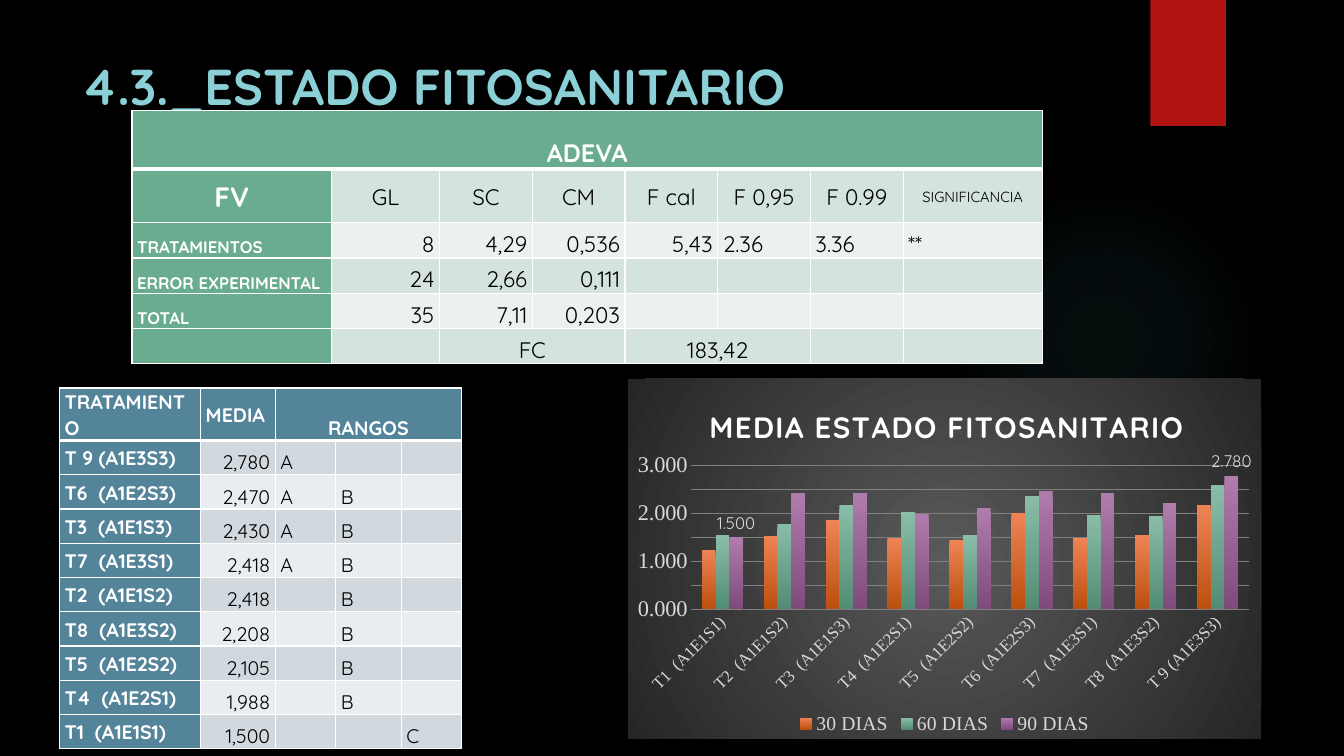
import lxml.etree
import pptx
import pptx.chart.data
import pptx.dml.color
import pptx.enum.chart
import pptx.enum.shapes
import pptx.enum.text
import pptx.oxml
import pptx.oxml.ns
import pptx.util
from pptx.util import Inches

RGBColor = pptx.dml.color.RGBColor
BLACK = RGBColor(0x00, 0x00, 0x00)
WHITE = RGBColor(0xFF, 0xFF, 0xFF)
RED = RGBColor(0xB0, 0x15, 0x13)
AQUA = RGBColor(0x8A, 0xD0, 0xD6)
GLOW = RGBColor(0x50, 0xB9, 0xC1)
LIGHT_GREY = RGBColor(0xD9, 0xD9, 0xD9)
GRID_GREY = RGBColor(0x80, 0x80, 0x80)
PANEL = (RGBColor(0x59, 0x59, 0x59), RGBColor(0x26, 0x26, 0x26))
# Header fill, then the two fills of alternating rows
GREENS = (RGBColor(0x6A, 0xAC, 0x90), RGBColor(0xD4, 0xE3, 0xDB), RGBColor(0xEB, 0xF1, 0xEE))
BLUES = (RGBColor(0x54, 0x84, 0x9A), RGBColor(0xD1, 0xD9, 0xDE), RGBColor(0xE9, 0xED, 0xEF))

FONT = "Quicksand"
AXIS_FONT = "Times New Roman"
DRAWING = 'xmlns:a="http://schemas.openxmlformats.org/drawingml/2006/main"'
CHART = 'xmlns:c="http://schemas.openxmlformats.org/drawingml/2006/chart"'
ALIGN = pptx.enum.text.PP_ALIGN
ANCHOR = pptx.enum.text.MSO_ANCHOR

ADEVA_WIDTHS = (1.98, 1.07, 0.92, 0.92, 0.92, 0.92, 0.92, 1.38)
ADEVA_HEIGHTS = (0.58, 0.53, 0.35, 0.35, 0.35, 0.35)
ADEVA_MERGES = ((0, 0, 7), (5, 2, 3), (5, 4, 5))
ADEVA = (
    ("ADEVA",),
    ("FV", "GL", "SC", "CM", "F cal", "F 0,95", "F 0.99", "SIGNIFICANCIA"),
    ("TRATAMIENTOS", "8", "4,29", "0,536", "5,43", "2.36", "3.36", "**"),
    ("ERROR EXPERIMENTAL", "24", "2,66", "0,111"),
    ("TOTAL", "35", "7,11", "0,203"),
    ("", "", "FC", "", "183,42"),
)
RANGE_WIDTHS = (1.4, 0.74, 0.6, 0.65, 0.6)
RANGES = (
    ("TRATAMIENTO", "MEDIA", "RANGOS"),
    ("T 9 (A1E3S3)", "2,780", "A"),
    ("T6  (A1E2S3)", "2,470", "A", "B"),
    ("T3  (A1E1S3)", "2,430", "A", "B"),
    ("T7  (A1E3S1)", "2,418", "A", "B"),
    ("T2  (A1E1S2)", "2,418", "", "B"),
    ("T8  (A1E3S2)", "2,208", "", "B"),
    ("T5  (A1E2S2)", "2,105", "", "B"),
    ("T4  (A1E2S1)", "1,988", "", "B"),
    ("T1  (A1E1S1)", "1,500", "", "", "C"),
)
CATEGORIES = ("T1  (A1E1S1)", "T2  (A1E1S2)", "T3  (A1E1S3)", "T4  (A1E2S1)", "T5  (A1E2S2)",
              "T6  (A1E2S3)", "T7  (A1E3S1)", "T8  (A1E3S2)", "T 9 (A1E3S3)")
SERIES = (
    ("30 DIAS", (1.24, 1.53, 1.85, 1.49, 1.44, 2, 1.48, 1.54, 2.17),
     (RGBColor(0xEE, 0x84, 0x55), RGBColor(0xBC, 0x4F, 0x0E))),
    ("60 DIAS", (1.54, 1.77, 2.17, 2.02, 1.54, 2.35, 1.96, 1.95, 2.58),
     (RGBColor(0x89, 0xBD, 0xA7), RGBColor(0x53, 0x8C, 0x74))),
    ("90 DIAS", (1.5, 2.418, 2.43, 1.988, 2.105, 2.47, 2.418, 2.208, 2.78),
     (RGBColor(0xAF, 0x7C, 0xAC), RGBColor(0x7F, 0x4B, 0x7C))),
)


def apply(target, **values):
    for name, value in values.items():
        setattr(target, name, value)


def set_font(font, size, color, bold=False, name=FONT):
    apply(font, size=pptx.util.Pt(size), bold=bold, name=name)
    font.color.rgb = color


def set_gradient(properties, stops, circular=False):
    """Fill shape properties with (position, colour, opacity) stops, in percent."""
    for tag in ("a:solidFill", "a:gradFill", "a:noFill"):
        for old in properties.findall(pptx.oxml.ns.qn(tag)):
            properties.remove(old)
    marks = "".join(
        f'<a:gs pos="{position * 1000}"><a:srgbClr val="{color}">'
        f'<a:alpha val="{opacity * 1000}"/></a:srgbClr></a:gs>'
        for position, color, opacity in stops)
    direction = ('<a:path path="circle"><a:fillToRect l="50000" t="50000" r="50000" b="50000"/></a:path>'
                 if circular else '<a:lin ang="5400000" scaled="0"/>')
    gradient = pptx.oxml.parse_xml(
        f"<a:gradFill {DRAWING}><a:gsLst>{marks}</a:gsLst>{direction}</a:gradFill>")
    geometry = properties.find(pptx.oxml.ns.qn("a:prstGeom"))
    if geometry is None:
        properties.insert(0, gradient)
    else:
        geometry.addnext(gradient)


def two_stops(colors):
    return [(0, colors[0], 100), (100, colors[1], 100)]


def add_plain_shape(slide, kind, left, top, width, height, color):
    shape = slide.shapes.add_shape(kind, Inches(left), Inches(top), Inches(width), Inches(height))
    shape.shadow.inherit = False
    shape.fill.solid()
    shape.fill.fore_color.rgb = color
    shape.line.fill.background()
    return shape


def set_borders(cell, top, bottom):
    properties = cell._tc.get_or_add_tcPr()
    for side, points in (("L", 1), ("R", 1), ("T", top), ("B", bottom)):
        properties.append(pptx.oxml.parse_xml(
            f'<a:ln{side} {DRAWING} w="{points * 12700}"><a:solidFill>'
            f'<a:srgbClr val="{WHITE}"/></a:solidFill></a:ln{side}>'))


def add_grid(slide, left, top, widths, heights, rows, fills, merges, style):
    """Add a table; style(row, column) gives size, alignment and anchor."""
    table = slide.shapes.add_table(len(heights), len(widths), Inches(left), Inches(top),
                                   Inches(sum(widths)), Inches(sum(heights))).table
    for column, width in zip(table.columns, widths):
        column.width = Inches(width)
    for row, height in zip(table.rows, heights):
        row.height = Inches(height)
    for row, first, last in merges:
        table.cell(row, first).merge(table.cell(row, last))
    for row in range(len(heights)):
        for column in range(len(widths)):
            cell = table.cell(row, column)
            header = row == 0 or column == 0
            size, alignment, anchor = style(row, column)
            apply(cell, margin_left=Inches(0.05), margin_right=Inches(0.05),
                  margin_top=0, margin_bottom=0, vertical_anchor=anchor)
            set_borders(cell, 3 if row == 1 else 1, 3 if row == 0 else 1)
            cell.fill.solid()
            cell.fill.fore_color.rgb = fills[0] if header else fills[2 - row % 2]
            if column < len(rows[row]) and rows[row][column]:
                paragraph = cell.text_frame.paragraphs[0]
                apply(paragraph, alignment=alignment, line_spacing=1.07,
                      space_after=pptx.util.Pt(4))
                run = paragraph.add_run()
                run.text = rows[row][column]
                set_font(run.font, size, WHITE if header else BLACK, header)


def adeva_style(row, column):
    if row == 0:
        return 18, ALIGN.CENTER, ANCHOR.BOTTOM
    if row == 1:
        return {0: 20, 7: 10.5}.get(column, 16), ALIGN.CENTER, ANCHOR.MIDDLE
    if column == 0:
        return 12, ALIGN.LEFT, ANCHOR.BOTTOM
    if row == 5:
        return 16, ALIGN.CENTER, ANCHOR.BOTTOM
    return 16, ALIGN.RIGHT if column < 5 else ALIGN.LEFT, ANCHOR.BOTTOM


def range_style(row, column):
    if column == 0 or (row, column) == (0, 1):
        return 14, ALIGN.LEFT, ANCHOR.MIDDLE
    if row == 0:
        return 14, ALIGN.CENTER, ANCHOR.BOTTOM
    return 14, ALIGN.RIGHT if column == 1 else ALIGN.LEFT, ANCHOR.BOTTOM


def set_layout(parent, successor, inner=False, **places):
    """Place a chart part by fractions of the chart area."""
    for old in parent.findall(pptx.oxml.ns.qn("c:layout")):
        parent.remove(old)
    target = '<c:layoutTarget val="inner"/>' if inner else ""
    modes = "".join(f'<c:{name}Mode val="edge"/>' for name in "xy")
    values = "".join(f'<c:{name} val="{value}"/>' for name, value in places.items())
    layout = pptx.oxml.parse_xml(
        f"<c:layout {CHART}><c:manualLayout>{target}{modes}{values}</c:manualLayout></c:layout>")
    parent.find(pptx.oxml.ns.qn(successor)).addprevious(layout)


def add_media_chart(slide):
    data = pptx.chart.data.CategoryChartData(number_format="0.000")
    data.categories = CATEGORIES
    for name, values, _ in SERIES:
        data.add_series(name, values)
    chart = slide.shapes.add_chart(
        pptx.enum.chart.XL_CHART_TYPE.COLUMN_CLUSTERED,
        Inches(6.23), Inches(3.76), Inches(6.28), Inches(3.57), data).chart
    set_font(chart.font, 10, WHITE)

    # Panel and title
    panel = pptx.oxml.parse_xml(f"<c:spPr {CHART} {DRAWING}><a:ln><a:noFill/></a:ln></c:spPr>")
    set_gradient(panel, two_stops(PANEL), circular=True)
    chart._chartSpace.chart.addnext(panel)
    chart.has_title = True
    run = chart.chart_title.text_frame.paragraphs[0].add_run()
    run.text = "MEDIA ESTADO FITOSANITARIO"
    set_font(run.font, 21, WHITE, True)
    run.font._element.set("spc", "100")
    set_layout(chart.chart_title._element, "c:overlay", x=0.12, y=0.06)

    # Columns and the labels of the lowest and highest treatments
    plot = chart.plots[0]
    apply(plot, gap_width=150, overlap=0, vary_by_categories=False)
    for series, (_, _, colors) in zip(plot.series, SERIES):
        set_gradient(series._element.get_or_add_spPr(), two_stops(colors))
    last = plot.series[2]
    last.data_labels.show_value = False
    for index in (0, 8):
        label = last.points[index].data_label
        set_font(label.font, 12, LIGHT_GREY)
        label.position = pptx.enum.chart.XL_LABEL_POSITION.OUTSIDE_END
    set_layout(plot._element.getparent(), "c:barChart", inner=True, x=0.1, y=0.24, w=0.88, h=0.4)

    # Axes and legend
    for axis, size in ((chart.category_axis, 12), (chart.value_axis, 16)):
        set_font(axis.tick_labels.font, size, LIGHT_GREY, name=AXIS_FONT)
        axis.major_tick_mark = pptx.enum.chart.XL_TICK_MARK.NONE
        axis.format.line.fill.background()
    chart.category_axis._element.txPr.bodyPr.set("rot", "-2700000")
    apply(chart.value_axis, minimum_scale=0, maximum_scale=3, major_unit=0.5)
    apply(chart.value_axis.tick_labels, number_format="0.000", number_format_is_linked=False)
    grid = chart.value_axis.major_gridlines.format.line
    grid.width = pptx.util.Pt(0.75)
    grid.color.rgb = GRID_GREY
    chart.has_legend = True
    apply(chart.legend, position=pptx.enum.chart.XL_LEGEND_POSITION.BOTTOM, include_in_layout=False)
    set_font(chart.legend.font, 14, LIGHT_GREY, name=AXIS_FONT)


def add_title(slide, text):
    title = slide.shapes.title
    apply(title, left=Inches(0.71), top=Inches(0.5), width=Inches(10.29), height=Inches(1.53))
    apply(title.text_frame, text=text, word_wrap=True, vertical_anchor=ANCHOR.TOP)
    paragraph = title.text_frame.paragraphs[0]
    apply(paragraph, alignment=ALIGN.LEFT, line_spacing=1.0)
    set_font(paragraph.runs[0].font, 36, AQUA, True)


def main():
    presentation = pptx.Presentation()
    apply(presentation, slide_width=Inches(13.33), slide_height=Inches(7.5))
    slide = presentation.slides.add_slide(presentation.slide_layouts[5])
    slide.background.fill.solid()
    slide.background.fill.fore_color.rgb = BLACK

    # Backdrop
    shapes = pptx.enum.shapes.MSO_SHAPE
    glow = add_plain_shape(slide, shapes.OVAL, 9.41, 1.83, 3.08, 3.08, GLOW)
    set_gradient(glow._element.spPr, [(0, GLOW, 7), (36, GLOW, 6), (69, GLOW, 0)], circular=True)
    add_plain_shape(slide, shapes.RECTANGLE, 11.41, 0, 0.75, 1.25, RED)

    # Content
    add_title(slide, "4.3._ESTADO FITOSANITARIO")
    add_media_chart(slide)
    add_grid(slide, 0.59, 3.85, RANGE_WIDTHS, [0.34] * len(RANGES), RANGES, BLUES,
             ((0, 2, 4),), range_style)
    add_grid(slide, 1.31, 1.1, ADEVA_WIDTHS, ADEVA_HEIGHTS, ADEVA, GREENS,
             ADEVA_MERGES, adeva_style)
    presentation.save("out.pptx")


if __name__ == "__main__":
    main()
